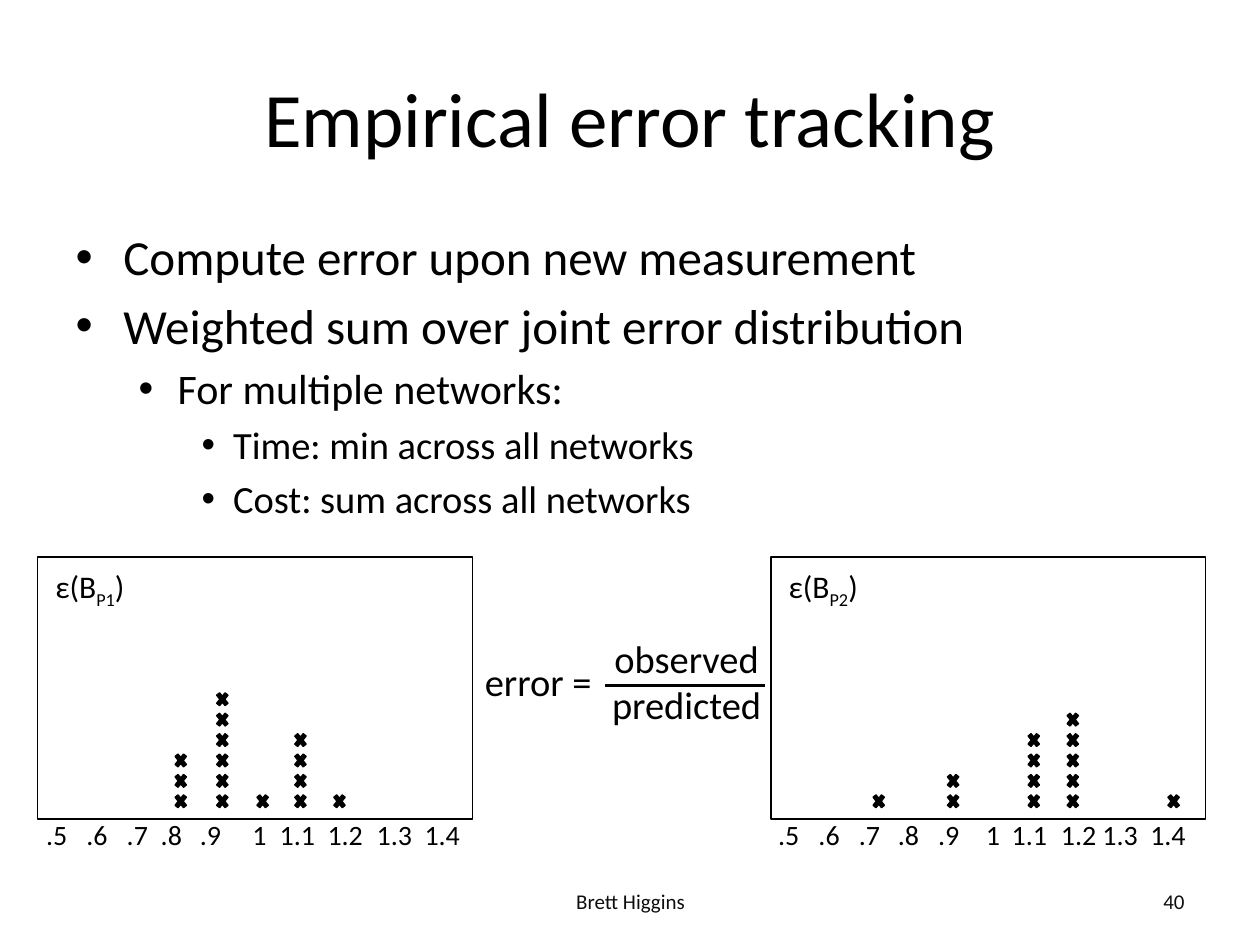
from lxml.etree import SubElement
from pptx import Presentation
from pptx.dml.color import RGBColor
from pptx.enum.shapes import MSO_CONNECTOR, MSO_SHAPE
from pptx.enum.text import MSO_ANCHOR, PP_ALIGN
from pptx.oxml.ns import qn
from pptx.util import Inches, Pt

COLORS = {"ink": "000000", "footer": "0D0D0D"}
FONT = "Calibri"

BULLETS = [
    (0, "Compute error upon new measurement"),
    (0, "Weighted sum over joint error distribution"),
    (1, "For multiple networks:"),
    (2, "Time: min across all networks"),
    (2, "Cost: sum across all networks"),
]
# Per level: text size, left margin, hanging indent
LEVELS = [(28, 0.38, 0.38), (24, 0.81, 0.31), (22, 1.25, 0.25)]

TICKS = [".5", ".6", ".7", ".8", ".9", "1", "1.1", "1.2", "1.3", "1.4"]
# Tick centres and mark columns (offset: count) are measured from the panel's left side
PANELS = [
    {
        "left": 0.3,
        "subscript": "P1",
        "ticks": [0.15, 0.47, 0.79, 1.06, 1.37, 1.76, 2.06, 2.44, 2.83, 3.21],
        "columns": {1.07: 3, 1.4: 6, 1.72: 1, 2.02: 4, 2.33: 1},
    },
    {
        "left": 6.12,
        "subscript": "P2",
        "ticks": [0.14, 0.46, 0.78, 1.09, 1.41, 1.76, 2.05, 2.44, 2.77, 3.15],
        "columns": {0.79: 1, 1.38: 2, 2.02: 4, 2.33: 5, 3.13: 1},
    },
]


def color(name):
    return RGBColor.from_string(COLORS[name])


def style(para, size, align=PP_ALIGN.LEFT, ink="ink"):
    para.alignment = align
    para.font.size = Pt(size)
    para.font.name = FONT
    para.font.color.rgb = color(ink)


def add_text(parent, left, top, width, height, lines, size,
             align=PP_ALIGN.LEFT, ink="ink", anchor=MSO_ANCHOR.TOP, wrap=False):
    box = parent.shapes.add_textbox(
        Inches(left), Inches(top), Inches(width), Inches(height))
    frame = box.text_frame
    frame.word_wrap = wrap
    frame.vertical_anchor = anchor
    frame.text = "\n".join(lines)
    for para in frame.paragraphs:
        style(para, size, align, ink)
    return box


def add_title(page, left, top, width, height):
    title = page.shapes.title
    title.left, title.top = Inches(left), Inches(top)
    title.width, title.height = Inches(width), Inches(height)
    title.text_frame.text = "Empirical error tracking"
    title.text_frame.vertical_anchor = MSO_ANCHOR.MIDDLE
    style(title.text_frame.paragraphs[0], 44, PP_ALIGN.CENTER)


def add_bullets(page, left, top, width, height):
    body = page.placeholders[1]
    body.left, body.top = Inches(left), Inches(top)
    body.width, body.height = Inches(width), Inches(height)
    frame = body.text_frame
    frame.text = "\n".join(text for _, text in BULLETS)
    for index, (para, (level, _)) in enumerate(zip(frame.paragraphs, BULLETS)):
        size, margin, hanging = LEVELS[level]
        para.level = level
        para.space_before = Pt(0.2 * size if index else 0)
        properties = para._p.get_or_add_pPr()
        properties.set("marL", str(Inches(margin)))
        properties.set("indent", str(-Inches(hanging)))
        SubElement(properties, qn("a:buFont"), typeface="Arial")
        SubElement(properties, qn("a:buChar"), char="•")
        style(para, size)


def add_mark(page, left, top):
    mark = page.shapes.add_shape(
        MSO_SHAPE.MATH_MULTIPLY, Inches(left), Inches(top), Inches(0.13), Inches(0.16))
    mark.shadow.inherit = False
    mark.fill.solid()
    mark.fill.fore_color.rgb = color("ink")
    mark.line.color.rgb = color("ink")
    mark.line.width = Pt(0.75)


def add_axis_labels(page, left, top, ticks):
    inset = 0.08
    box = add_text(page, left - inset, top, 3.7, 0.37, [], 16, wrap=True)
    box.text_frame.margin_left = Inches(inset)
    para = box.text_frame.paragraphs[0]
    para.text = "".join("\t" + label for label in TICKS)
    properties = para._p.get_or_add_pPr()
    stops = SubElement(properties, qn("a:tabLst"))
    properties.insert(0, stops)
    for tick in ticks:
        SubElement(stops, qn("a:tab"), pos=str(Inches(tick)), algn="ctr")


def add_panel(page, panel, top, width, height):
    left = panel["left"]
    # Frame
    frame = page.shapes.add_shape(
        MSO_SHAPE.RECTANGLE, Inches(left), Inches(top), Inches(width), Inches(height))
    frame.shadow.inherit = False
    frame.fill.background()
    frame.line.color.rgb = color("ink")
    frame.line.width = Pt(0.75)
    # Heading with subscript
    heading = add_text(page, left + 0.04, top + 0.03, 0.78, 0.4, ["ε(B"], 18)
    para = heading.text_frame.paragraphs[0]
    for text, baseline in ((panel["subscript"], -25000), (")", 0)):
        span = para.add_run()
        span.text = text
        span._r.get_or_add_rPr().set("baseline", str(baseline))
    # Stacked marks, five steps spanning 0.81 inches
    for offset, count in panel["columns"].items():
        for level in range(count):
            add_mark(page, left + offset, top + 1.86 - level * 0.81 / 5)
    add_axis_labels(page, left, top + height - 0.06, panel["ticks"])


def add_formula(page, left, top):
    add_text(page, left, top + 0.18, 1.06, 0.47, ["error ="], 22)
    # Fraction
    fraction = page.shapes.add_group_shape()
    add_text(fraction, left + 1, top, 1.4, 0.84, ["observed", "predicted"], 22,
             PP_ALIGN.CENTER)
    height = Inches(top + 0.45)
    bar = fraction.shapes.add_connector(
        MSO_CONNECTOR.STRAIGHT, Inches(left + 1.05), height, Inches(left + 2.32), height)
    bar.line.color.rgb = color("ink")
    bar.line.width = Pt(2)
    SubElement(bar._element.spPr, qn("a:effectLst"))


def add_footer(page, top, height):
    add_text(page, 3.42, top, 3.17, height, ["Brett Higgins"], 12,
             PP_ALIGN.CENTER, "footer", MSO_ANCHOR.MIDDLE, True)
    add_text(page, 7.17, top, 2.33, height, ["40"], 12,
             PP_ALIGN.RIGHT, "footer", MSO_ANCHOR.MIDDLE, True)


def main():
    deck = Presentation()
    deck.slide_width, deck.slide_height = Inches(10), Inches(7.5)
    page = deck.slides.add_slide(deck.slide_layouts[1])
    add_title(page, 0.5, 0.3, 9, 1.25)
    add_bullets(page, 0.5, 1.75, 9, 4.95)
    for panel in PANELS:
        add_panel(page, panel, 4.42, 3.45, 2.08)
    add_formula(page, 3.75, 4.99)
    add_footer(page, 6.95, 0.4)
    deck.save("out.pptx")


if __name__ == "__main__":
    main()
